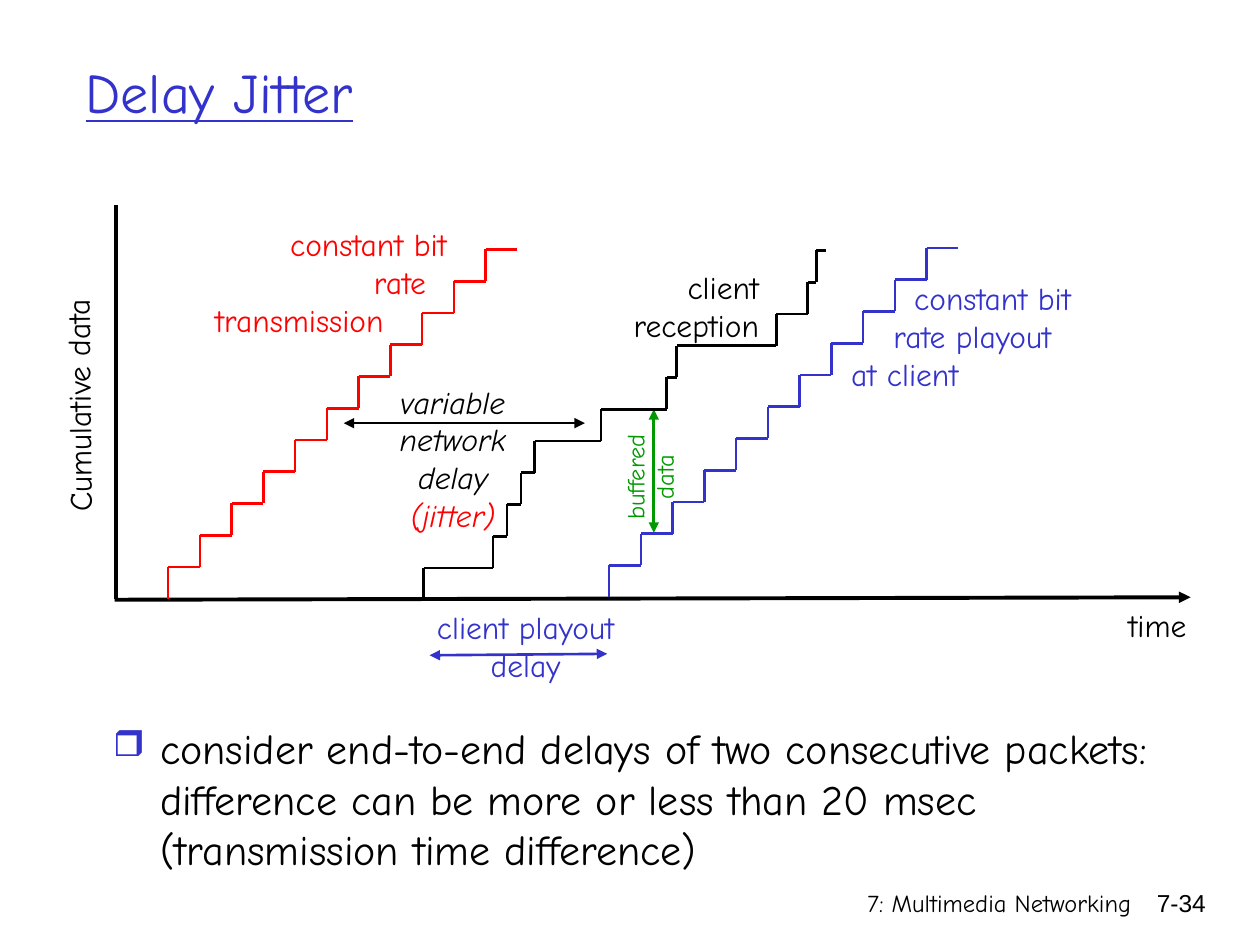
from lxml.etree import SubElement
from pptx import Presentation
from pptx.dml.color import RGBColor
from pptx.enum.shapes import MSO_CONNECTOR
from pptx.enum.text import MSO_ANCHOR, PP_ALIGN
from pptx.oxml.ns import qn
from pptx.util import Cm, Pt

BLACK = RGBColor(0x00, 0x00, 0x00)
RED = RGBColor(0xFF, 0x00, 0x00)
BLUE = RGBColor(0x33, 0x33, 0xCC)
GREEN = RGBColor(0x00, 0x99, 0x00)
FONT = "Comic Neue"
LEFT, CENTER, RIGHT = PP_ALIGN.LEFT, PP_ALIGN.CENTER, PP_ALIGN.RIGHT

TITLE = "Delay Jitter"
POINT = ("consider end-to-end delays of two consecutive packets: difference "
         "can be more or less than 20 msec (transmission time difference)")

RISE = 0.64
EVEN_RUNS = [0.64] * 11
RECEPTION_RUNS = [1.4, 0.28, 0.28, 0.28, 1.34, 1.32, 0.2, 2.01, 0.63, 0.18, 0.2]
STAIRS = [
    (3.39, 12.07, EVEN_RUNS, RED),
    (8.54, 12.09, RECEPTION_RUNS, BLACK),
    (12.28, 12.04, EVEN_RUNS, BLUE),
]

AXIS_WIDTH, LINE_WIDTH = 2.25, 1.5
LINES = [
    ((2.34, 4.14), (2.34, 12.07), BLACK, AXIS_WIDTH, ()),
    ((2.31, 12.09), (24, 12.04), BLACK, AXIS_WIDTH, ("tailEnd",)),
    ((6.93, 8.53), (11.79, 8.53), BLACK, LINE_WIDTH, ("headEnd", "tailEnd")),
    ((8.66, 13.21), (12.24, 13.18), BLUE, LINE_WIDTH, ("headEnd", "tailEnd")),
    ((13.18, 10.74), (13.18, 8.25), GREEN, LINE_WIDTH, ("headEnd", "tailEnd")),
]

LABELS = [
    dict(at=(4.09, 4.42, 5.64, 2.54), color=RED, indents=(1.51, 3.2, 0),
         lines=["constant bit", "rate", "transmission"]),
    dict(at=(-1.14, 7.34, 5.44, 1.02), lines=["Cumulative data"], turn=269.4),
    dict(at=(22.5, 12.09, 1.83, 1.02), lines=["time"]),
    dict(at=(7.67, 7.59, 2.92, 3.3), align=CENTER, italic=True, last_color=RED,
         lines=["variable", "network", "delay", "(jitter)"]),
    dict(at=(12.22, 5.28, 3.33, 1.78), align=RIGHT, lines=["client", "reception"]),
    dict(at=(16.71, 5.51, 5.64, 2.54), color=BLUE, indents=(1.47, 1.05, 0.2),
         lines=["constant bit", "rate playout", "at client"]),
    dict(at=(8.26, 12.14, 4.67, 1.78), color=BLUE, align=CENTER,
         lines=["client playout", "delay"]),
    dict(at=(11.79, 8.89, 2.62, 1.45), color=GREEN, align=CENTER, size=14,
         lines=["buffered", "data"], turn=270),
    dict(at=(12.34, 17.78, 10.72, 1.27), align=RIGHT, size=14,
         lines=["7: Multimedia Networking"]),
    dict(at=(22.68, 17.78, 1.88, 1.27), align=RIGHT, size=14, name="Arial",
         lines=["7-34"]),
]


def style(para, size, color, name=FONT, italic=None):
    para.font.name = name
    para.font.size = Pt(size)
    para.font.color.rgb = color
    para.font.italic = italic


def add_line(page, start, end, color, width=LINE_WIDTH, arrows=()):
    ends = [Cm(value) for value in (*start, *end)]
    line = page.shapes.add_connector(MSO_CONNECTOR.STRAIGHT, *ends)
    line.line.color.rgb = color
    line.line.width = Pt(width)
    for arrow in arrows:
        SubElement(line.line._get_or_add_ln(), qn("a:" + arrow), type="triangle")
    SubElement(line._element.spPr, qn("a:effectLst"))


def add_stairs(page, x, y, runs, color):
    for run in runs:
        top, right = y - RISE, x + run
        add_line(page, (x, y), (x, top), color)
        add_line(page, (x, top), (right, top), color)
        x, y = right, top


def add_box(page, at):
    box = page.shapes.add_textbox(*[Cm(value) for value in at])
    box.text_frame.word_wrap = True
    return box


def add_label(page, at, lines, color=BLACK, align=LEFT, size=18, name=FONT,
              italic=None, indents=(), last_color=None, turn=0):
    box = add_box(page, at)
    box.rotation = turn
    box.text_frame.text = "\n".join(lines)
    paras = box.text_frame.paragraphs
    for para in paras:
        para.alignment = align
        style(para, size, color, name, italic)
    for para, indent in zip(paras, indents):
        para._p.get_or_add_pPr().set("marL", str(Cm(indent)))
    if last_color is not None:
        paras[-1].font.color.rgb = last_color


def add_point(page):
    para = add_box(page, (2.03, 14.45, 21.59, 2.46)).text_frame.paragraphs[0]
    para.text = POINT
    para.space_before = Pt(4.8)
    properties = para._p.get_or_add_pPr()
    properties.set("marL", str(Cm(0.95)))
    properties.set("indent", str(Cm(-0.95)))
    bullet_color = SubElement(properties, qn("a:buClr"))
    SubElement(bullet_color, qn("a:srgbClr"), val=str(BLUE))
    SubElement(properties, qn("a:buSzPct"), val="85000")
    SubElement(properties, qn("a:buChar"), char="❒")
    style(para, 24, BLACK)


def set_title(page):
    title = page.shapes.title
    title.left, title.top, title.width, title.height = (
        Cm(1.47), Cm(0.64), Cm(22.68), Cm(2.41))
    title.text_frame.text = TITLE
    title.text_frame.vertical_anchor = MSO_ANCHOR.MIDDLE
    para = title.text_frame.paragraphs[0]
    para.alignment = LEFT
    style(para, 32, BLUE)
    para.font.underline = True


def main():
    deck = Presentation()
    deck.slide_width, deck.slide_height = Cm(25.4), Cm(19.05)
    page = deck.slides.add_slide(deck.slide_layouts[5])
    set_title(page)
    for line in LINES:
        add_line(page, *line)
    for stairs in STAIRS:
        add_stairs(page, *stairs)
    for label in LABELS:
        add_label(page, **label)
    add_point(page)
    deck.save("out.pptx")


if __name__ == "__main__":
    main()
